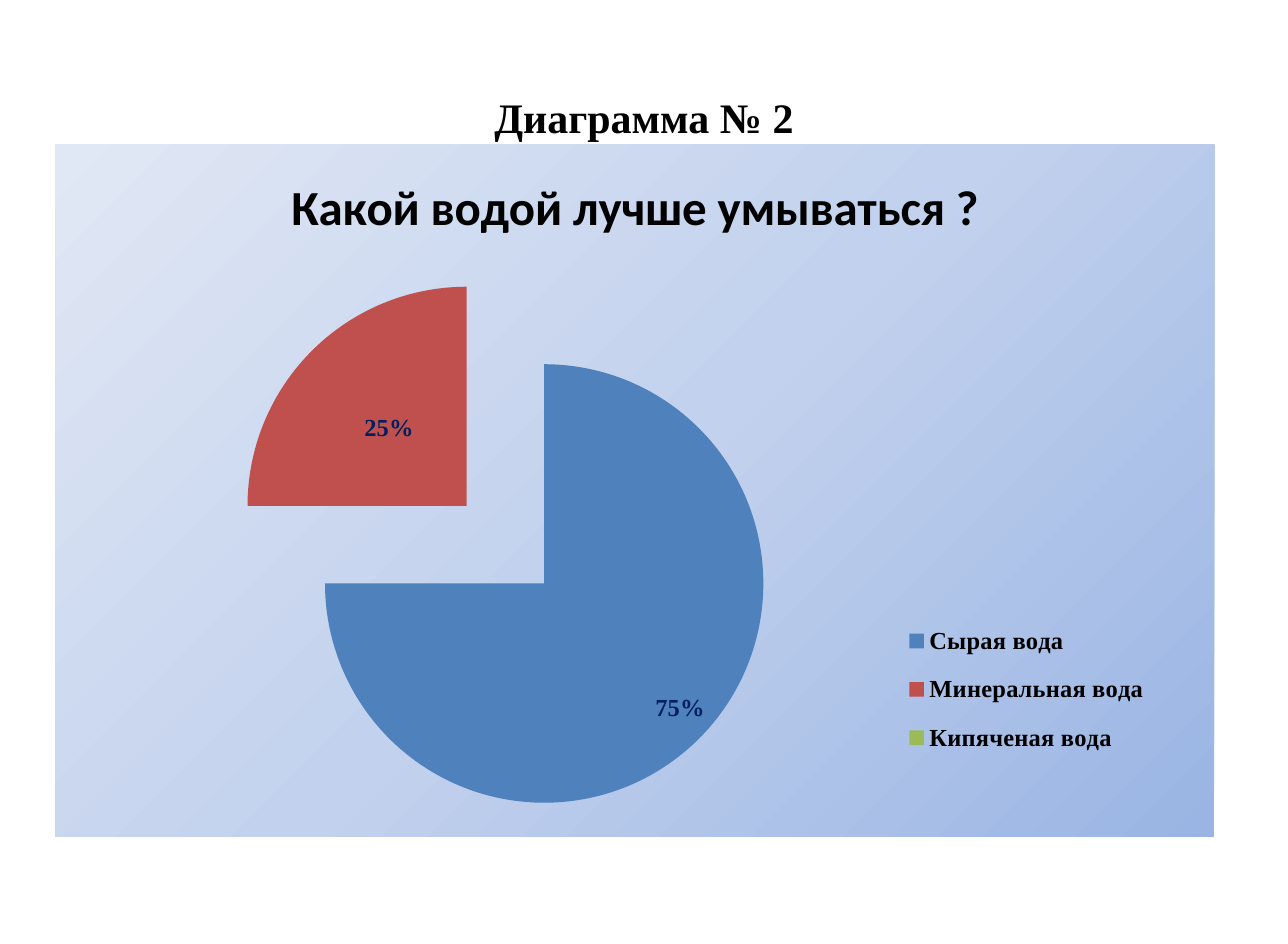
from lxml.etree import SubElement
from pptx import Presentation
from pptx.chart.data import CategoryChartData
from pptx.dml.color import RGBColor
from pptx.enum.chart import XL_CHART_TYPE, XL_LABEL_POSITION, XL_LEGEND_POSITION
from pptx.enum.text import MSO_ANCHOR, PP_ALIGN
from pptx.oxml import parse_xml
from pptx.oxml.ns import nsdecls, qn
from pptx.util import Inches, Pt

HEADING = "Диаграмма № 2"
QUESTION = "Какой водой лучше умываться ?"
ANSWERS = [
    ("Сырая вода", 75, "4F81BD"),
    ("Минеральная вода", 25, "C0504D"),
    ("Кипяченая вода", 0, "9BBB59"),
]
BACKDROP = [(0, "9AB5E4"), (50, "C2D1ED"), (100, "E1E8F5")]
BACKDROP_ANGLE = 225
EXPLOSION = 25
SERIF, SANS = "Times New Roman", "Calibri"
WIDTH, HEIGHT = Pt(737.06), Inches(7.5)
MARGIN = 0.05
PIE_AREA = (0.152, 0.182, 0.473, 0.792)
LEGEND_AREA = (0.728, 0.667, 0.22, 0.24)


def style(font, name, size, color, bold=True):
    font.name, font.size, font.bold = name, Pt(size), bold
    font.color.rgb = RGBColor.from_string(color)


def layout(area, inner=False):
    target = '<c:layoutTarget val="inner"/>' if inner else ""
    modes = "".join(f'<c:{side}Mode val="edge"/>' for side in "xy")
    sizes = "".join(f'<c:{side} val="{share}"/>' for side, share in zip("xywh", area))
    return parse_xml(
        f'<c:layout {nsdecls("c")}><c:manualLayout>{target}{modes}{sizes}'
        "</c:manualLayout></c:layout>"
    )


def place(part, new_layout):
    for old in part.findall(qn("c:layout")):
        part.remove(old)
    position = part.find(qn("c:legendPos"))
    if position is None:
        part.insert(0, new_layout)
    else:
        position.addnext(new_layout)


def gradient():
    stops = "".join(
        f'<a:gs pos="{share * 1000}"><a:srgbClr val="{color}"/></a:gs>'
        for share, color in BACKDROP
    )
    return parse_xml(
        f'<c:spPr {nsdecls("c", "a")}><a:gradFill><a:gsLst>{stops}</a:gsLst>'
        f'<a:lin ang="{BACKDROP_ANGLE * 60000}" scaled="0"/></a:gradFill>'
        "<a:ln><a:noFill/></a:ln></c:spPr>"
    )


def add_heading(page):
    box = page.shapes.add_textbox(
        int(WIDTH * MARGIN), int(HEIGHT * 0.04),
        int(WIDTH * (1 - 2 * MARGIN)), int(HEIGHT / 6),
    )
    frame = box.text_frame
    frame.word_wrap = True
    frame.vertical_anchor = MSO_ANCHOR.MIDDLE
    para = frame.paragraphs[0]
    para.text = HEADING
    para.alignment = PP_ALIGN.CENTER
    style(para.runs[0].font, SERIF, 24, "000000")


def add_pie(page):
    data = CategoryChartData()
    data.categories = [name for name, _, _ in ANSWERS]
    data.add_series(QUESTION, [value for _, value, _ in ANSWERS])
    chart = page.shapes.add_chart(
        XL_CHART_TYPE.PIE, Inches(0.44), Inches(1.15), Inches(9.21), Inches(5.5), data
    ).chart
    style(chart.font, SANS, 10, "000000", False)
    root = chart.element.find(qn("c:chart"))
    root.addnext(gradient())

    chart.has_title = True
    chart.chart_title.include_in_layout = False
    title = chart.chart_title.text_frame.paragraphs[0]
    title.text = QUESTION
    style(title.runs[0].font, SANS, 28, "000000")

    chart.has_legend = True
    chart.legend.position = XL_LEGEND_POSITION.RIGHT
    chart.legend.include_in_layout = False
    style(chart.legend.font, SERIF, 14, "000000")
    place(root.find(qn("c:legend")), layout(LEGEND_AREA))
    place(root.find(qn("c:plotArea")), layout(PIE_AREA, inner=True))

    chart.plots[0].vary_by_categories = True
    series = chart.plots[0].series[0]
    for index, (_, _, color) in enumerate(ANSWERS):
        fill = series.points[index].format.fill
        fill.solid()
        fill.fore_color.rgb = RGBColor.from_string(color)
    series_xml = root.find(".//" + qn("c:ser"))
    series_xml.find(qn("c:tx")).addnext(
        parse_xml(f'<c:explosion {nsdecls("c")} val="{EXPLOSION}"/>')
    )
    add_labels(series, series_xml)


def add_labels(series, series_xml):
    labels = series.data_labels
    labels.show_percentage, labels.show_value = True, False
    labels.number_format, labels.number_format_is_linked = "0%", False
    labels.position = XL_LABEL_POSITION.BEST_FIT
    style(labels.font, SERIF, 14, "002060")
    for index, (_, value, _) in enumerate(ANSWERS):
        if index == 0:
            continue
        label = series.points[index].data_label
        label.position = XL_LABEL_POSITION.CENTER
        style(label.font, SERIF, 14, "002060")
        label_xml = series_xml.findall(".//" + qn("c:dLbl"))[-1]
        if value:
            label_xml.find(qn("c:showVal")).set("val", "0")
            label_xml.find(qn("c:showPercent")).set("val", "1")
        else:
            for child in list(label_xml)[1:]:
                label_xml.remove(child)
            SubElement(label_xml, qn("c:delete")).set("val", "1")


def main():
    deck = Presentation()
    deck.slide_width = WIDTH
    deck.slide_height = HEIGHT
    page = deck.slides.add_slide(deck.slide_layouts[6])
    add_heading(page)
    add_pie(page)
    deck.save("out.pptx")


if __name__ == "__main__":
    main()
